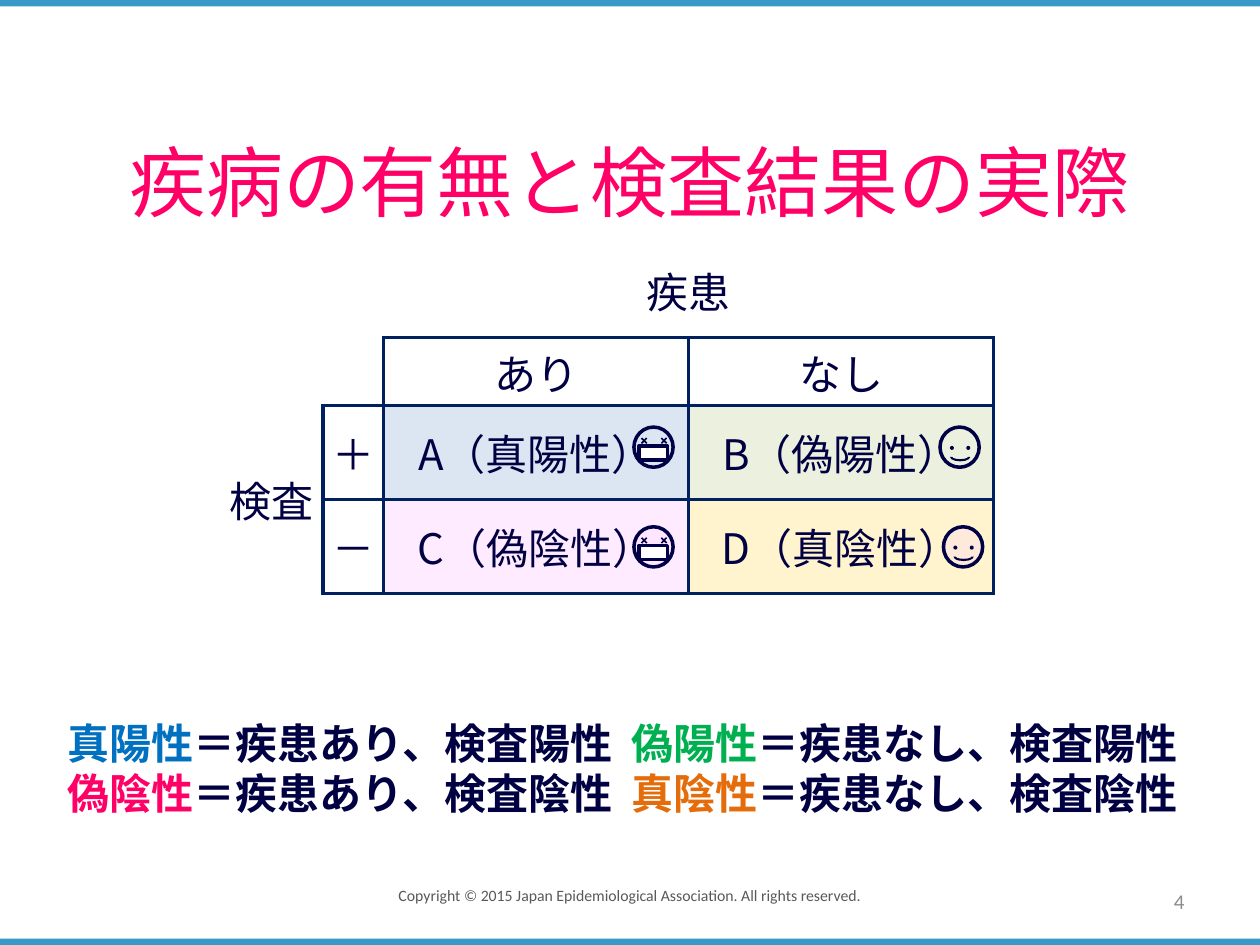
from lxml import etree
from pptx import Presentation, util as u
from pptx.dml.color import RGBColor
from pptx.enum import shapes, text
from pptx.oxml import ns

Cm, Pt = u.Cm, u.Pt
Shape, Align, Anchor = shapes.MSO_SHAPE, text.PP_ALIGN, text.MSO_ANCHOR
color = RGBColor.from_string
JAPANESE, LATIN = "Noto Sans CJK JP", "Calibri"
NAVY, INK, BORDER, PINK = "000042", "000046", "002060", "FF0066"


def style(paragraph, size, hue, align=Align.LEFT, name=JAPANESE):
    """Format a paragraph, covering its East Asian characters too."""
    paragraph.alignment = align
    font = paragraph.font
    font.size, font.name, font.color.rgb = Pt(size), name, color(hue)
    defaults = paragraph._p.pPr.find(ns.qn("a:defRPr"))
    etree.SubElement(defaults, ns.qn("a:ea"), typeface=name)


def draw(parent, kind, box, fill, line=None):
    """Add a flat preset shape; box is left, top, width, height in cm."""
    shape = parent.add_shape(kind, *map(Cm, box))
    shape.shadow.inherit = False
    shape.fill.solid()
    shape.fill.fore_color.rgb = color(fill)
    if line:
        shape.line.color.rgb = color(line)
        shape.line.width = Pt(2)
    else:
        shape.line.fill.background()
    return shape


deck = Presentation()
deck.slide_width, deck.slide_height = Cm(25.4), Cm(19.05)
slide = deck.slides.add_slide(deck.slide_layouts[6])

for top in (0, 18.92):
    draw(slide.shapes, Shape.RECTANGLE, (0, top, 25.4, 0.13), "3998C8")

# Title, copyright and page number
for words, box, size, hue, align, name in (
    ("疾病の有無と検査結果の実際", (1.27, 2.34, 22.86, 2.59), 44, PINK, Align.CENTER, JAPANESE),
    ("Copyright © 2015 Japan Epidemiological Association. All rights reserved.",
     (7.29, 17.73, 10.8, 0.64), 9, "595959", Align.CENTER, LATIN),
    ("4", (18.21, 17.65, 5.92, 1.02), 12, "8C8C8C", Align.RIGHT, LATIN),
):
    frame = slide.shapes.add_textbox(*map(Cm, box)).text_frame
    frame.word_wrap = True
    frame.vertical_anchor = Anchor.MIDDLE
    frame.text = words
    style(frame.paragraphs[0], size, hue, align, name)

# Two-by-two table of disease against test result
rows = (
    ("", "", "疾患", ""),
    ("", "", "あり", "なし"),
    ("検査", "＋", "A（真陽性）", "B（偽陽性）"),
    ("", "－", "C（偽陰性）", "D（真陰性）"),
)
cell_fills = {(2, 2): "DCE6F2", (2, 3): "EBF1DE", (3, 2): "FFEBFF", (3, 3): "FFF4CD"}
widths, heights = (2.06, 1.22, 6.15, 6.15), (1.9, 1.37, 1.9, 1.9)
table = slide.shapes.add_table(
    4, 4, Cm(4.45), Cm(4.9), Cm(sum(widths)), Cm(sum(heights))).table
table.first_row = table.horz_banding = False
table._tbl.tblPr.find(ns.qn("a:tableStyleId")).text = "{2D5ABB26-0587-4C30-8999-92F81FD0307C}"
for column, width in zip(table.columns, widths):
    column.width = Cm(width)
for row, height in zip(table.rows, heights):
    row.height = Cm(height)
table.cell(0, 2).merge(table.cell(0, 3))
table.cell(2, 0).merge(table.cell(3, 0))

for r, labels in enumerate(rows):
    for c, label in enumerate(labels):
        cell = table.cell(r, c)
        cell.margin_left = cell.margin_right = Cm(0.18)
        cell.margin_top = cell.margin_bottom = Cm(0.1)
        cell.vertical_anchor = Anchor.MIDDLE
        cell.text = label
        style(cell.text_frame.paragraphs[0], 24, NAVY, Align.CENTER if c else Align.LEFT)
        if r and c and r + c > 2:
            for side in ("lnL", "lnR", "lnT", "lnB"):
                edge = etree.SubElement(cell._tc.get_or_add_tcPr(), ns.qn(f"a:{side}"), w=str(Pt(2.25)))
                paint = etree.SubElement(edge, ns.qn("a:solidFill"))
                etree.SubElement(paint, ns.qn("a:srgbClr"), val=BORDER)
        if (r, c) in cell_fills:
            cell.fill.solid()
            cell.fill.fore_color.rgb = color(cell_fills[r, c])
        else:
            cell.fill.background()

# Definitions in two tabbed columns
definitions = (
    (("真陽性", "0070C0", "＝疾患あり、検査陽性"), ("偽陽性", "00B050", "＝疾患なし、検査陽性")),
    (("偽陰性", PINK, "＝疾患あり、検査陰性"), ("真陰性", "E46C0A", "＝疾患なし、検査陰性")),
)
frame = slide.shapes.add_textbox(Cm(1.12), Cm(14.33), Cm(23.32), Cm(2.31)).text_frame
frame.word_wrap = True
for i, pair in enumerate(definitions):
    paragraph = frame.add_paragraph() if i else frame.paragraphs[0]
    tabs = etree.SubElement(paragraph._p.get_or_add_pPr(), ns.qn("a:tabLst"))
    etree.SubElement(tabs, ns.qn("a:tab"), pos=str(Cm(11.37)), algn="l")
    style(paragraph, 24, NAVY)
    paragraph.font.bold = True
    for j, (term, hue, meaning) in enumerate(pair):
        if j:
            paragraph.add_run().text = "\t"
        term_run = paragraph.add_run()
        term_run.text = term
        term_run.font.color.rgb = color(hue)
        paragraph.add_run().text = meaning

# Faces: masked for the diseased, smiling for the healthy
for x, y, skin, masked in (
    (12.78, 8.61, "DCE6F2", True),
    (18.95, 8.61, "EBF1DE", False),
    (12.78, 10.62, "FFE5FF", True),
    (19.02, 10.62, "FDEADA", False),
):
    face = slide.shapes.add_group_shape().shapes
    draw(face, Shape.OVAL, (x, y, 0.79, 0.81), skin, INK)
    if masked:
        draw(face, Shape.RECTANGLE, (x + 0.1, y + 0.38, 0.58, 0.28), "FFFFFF", INK)
        for dx in (0.13, 0.53):
            eye = draw(face, Shape.CROSS, (x + dx, y + 0.2, 0.15, 0.15), INK)
            eye.adjustments[0] = 0.39
            eye.rotation = 43.8
    else:
        for dx in (0.2, 0.53):
            draw(face, Shape.OVAL, (x + dx, y + 0.38, 0.08, 0.08), INK)
        smile = draw(face, Shape.BLOCK_ARC, (x + 0.2, y + 0.51, 0.41, 0.18), INK)
        smile.rotation = 180

deck.save("out.pptx")
